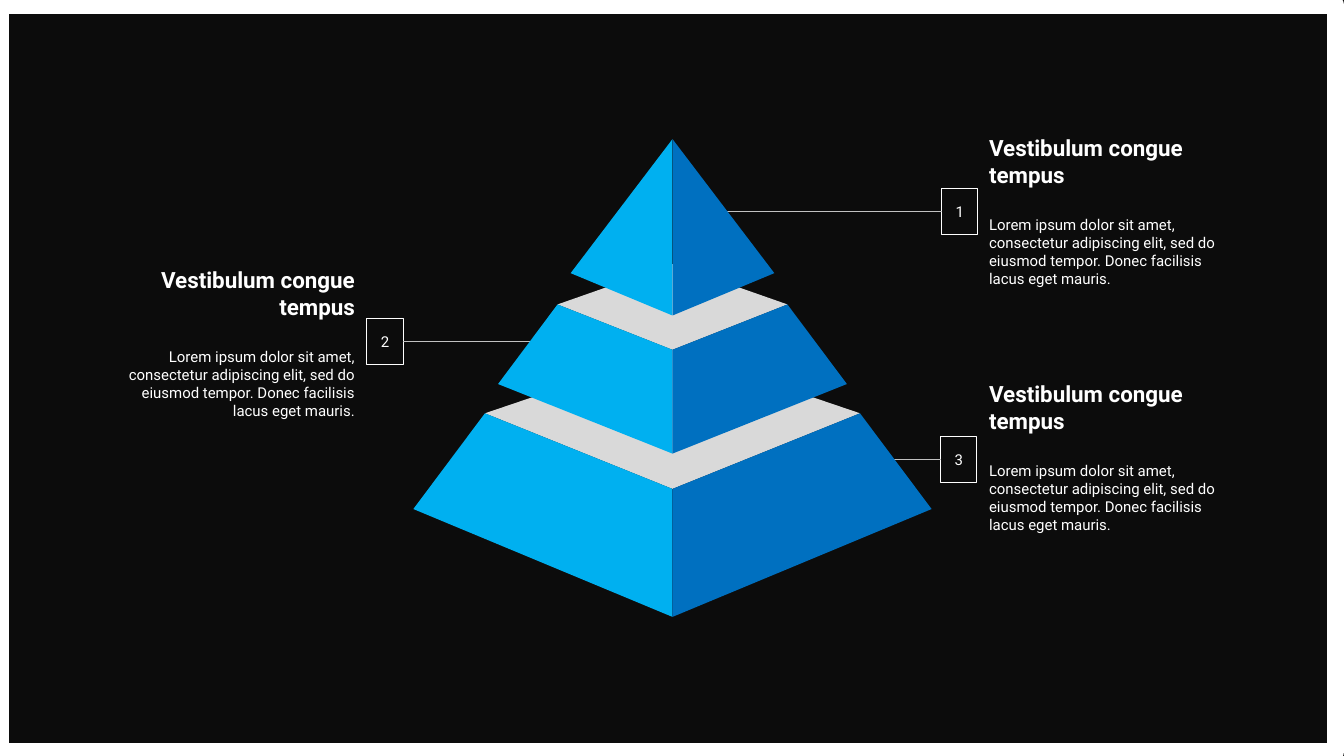
"""Build a dark slide with a three-tier pyramid and numbered callouts."""
from pptx import Presentation
from pptx.dml.color import RGBColor
from pptx.enum.shapes import MSO_CONNECTOR, MSO_SHAPE
from pptx.enum.text import MSO_ANCHOR, PP_ALIGN
from pptx.oxml.ns import qn
from pptx.util import Inches, Pt

COLORS = {
    "dark": "0C0C0C",
    "white": "FFFFFF",
    "rule": "C2C2C2",
    "lid": "D9D9D9",
    "left": "00B0F0",
    "right": "0070C0",
}
FONT = "Roboto"
HEADING = "Vestibulum congue tempus"
BODY = (
    "Lorem ipsum dolor sit amet, consectetur adipiscing elit, sed do "
    "eiusmod tempor. Donec facilisis lacus eget mauris."
)


def style(sp, fill=None, line=None, width=0.75):
    sp.shadow.inherit = False
    if fill:
        sp.fill.solid()
        sp.fill.fore_color.rgb = RGBColor.from_string(COLORS[fill])
    else:
        sp.fill.background()
    if line:
        sp.line.color.rgb = RGBColor.from_string(COLORS[line])
        sp.line.width = Pt(width)
    else:
        sp.line.fill.background()


def write(sp, paragraphs, align):
    tf = sp.text_frame
    tf.word_wrap = True
    tf.vertical_anchor = MSO_ANCHOR.MIDDLE
    tf.margin_left = tf.margin_right = Inches(0.13)
    tf.margin_top = tf.margin_bottom = Inches(0.13)
    for i, (text, size, bold, after) in enumerate(paragraphs):
        p = tf.add_paragraph() if i else tf.paragraphs[0]
        p.alignment = align
        p.space_after = Pt(after)
        r = p.add_run()
        r.text = text
        r.font.name = FONT
        r.font.size = Pt(size)
        r.font.bold = bold
        r.font.color.rgb = RGBColor.from_string(COLORS["white"])


prs = Presentation()
prs.slide_width = Inches(13.33)
prs.slide_height = Inches(7.5)
s = prs.slides.add_slide(prs.slide_layouts[6])
s.background.fill.solid()
s.background.fill.fore_color.rgb = RGBColor.from_string(COLORS["dark"])

frame = s.shapes.add_shape(
    MSO_SHAPE.RECTANGLE, 0, Inches(0.05), Inches(13.25), Inches(7.41)
)
style(frame, line="white", width=12.25)

callouts = [
    ("3", 9.68, 3.52, 9.33, 4.33, 8.8, 1, PP_ALIGN.LEFT),
    ("2", 0.93, 2.39, 3.64, 3.16, 5.29, 3, PP_ALIGN.RIGHT),
    ("1", 9.68, 1.08, 9.34, 1.87, 7.16, 1, PP_ALIGN.LEFT),
]
for number, px, py, bx, by, start, side, align in callouts:
    panel = s.shapes.add_shape(
        MSO_SHAPE.RECTANGLE, Inches(px), Inches(py), Inches(2.72), Inches(2.02)
    )
    style(panel, "dark")
    write(panel, [(HEADING, 16, True, 19.5), (BODY, 10.7, False, 0)], align)

    badge = s.shapes.add_shape(
        MSO_SHAPE.RECTANGLE, Inches(bx), Inches(by), Inches(0.36), Inches(0.46)
    )
    style(badge, "dark", "white")
    write(badge, [(number, 10.7, False, 0)], PP_ALIGN.CENTER)

    y = Inches(by + 0.23)
    rule = s.shapes.add_connector(
        MSO_CONNECTOR.STRAIGHT, Inches(start), y, Inches(bx), y
    )
    rule.end_connect(badge, side)
    rule.line.color.rgb = RGBColor.from_string(COLORS["rule"])
    rule.line.width = Pt(0.75)
    sp_pr = rule._element.spPr
    sp_pr.append(sp_pr.makeelement(qn("a:effectLst"), {}))

AXIS = 6.67
tiers = [
    ([(4.81, 4.1), (AXIS, 4.85), (AXIS, 6.12), (4.1, 5.05)], 3.47),
    ([(5.53, 3.02), (AXIS, 3.47), (AXIS, 4.5), (4.94, 3.81)], 2.62),
    ([(AXIS, 1.38), (AXIS, 3.13), (5.66, 2.71)], None),
]
for face, back in tiers:
    mirrored = [(2 * AXIS - x, y) for x, y in face]
    outlines = [("left", face), ("right", mirrored)]
    if back:
        outlines.insert(0, ("lid", [face[0], face[1], mirrored[0], (AXIS, back)]))
    for color, outline in outlines:
        points = [(Inches(x), Inches(y)) for x, y in outline]
        builder = s.shapes.build_freeform(*points[0])
        builder.add_line_segments(points[1:], close=True)
        style(builder.convert_to_shape(), color)

prs.save("out.pptx")
